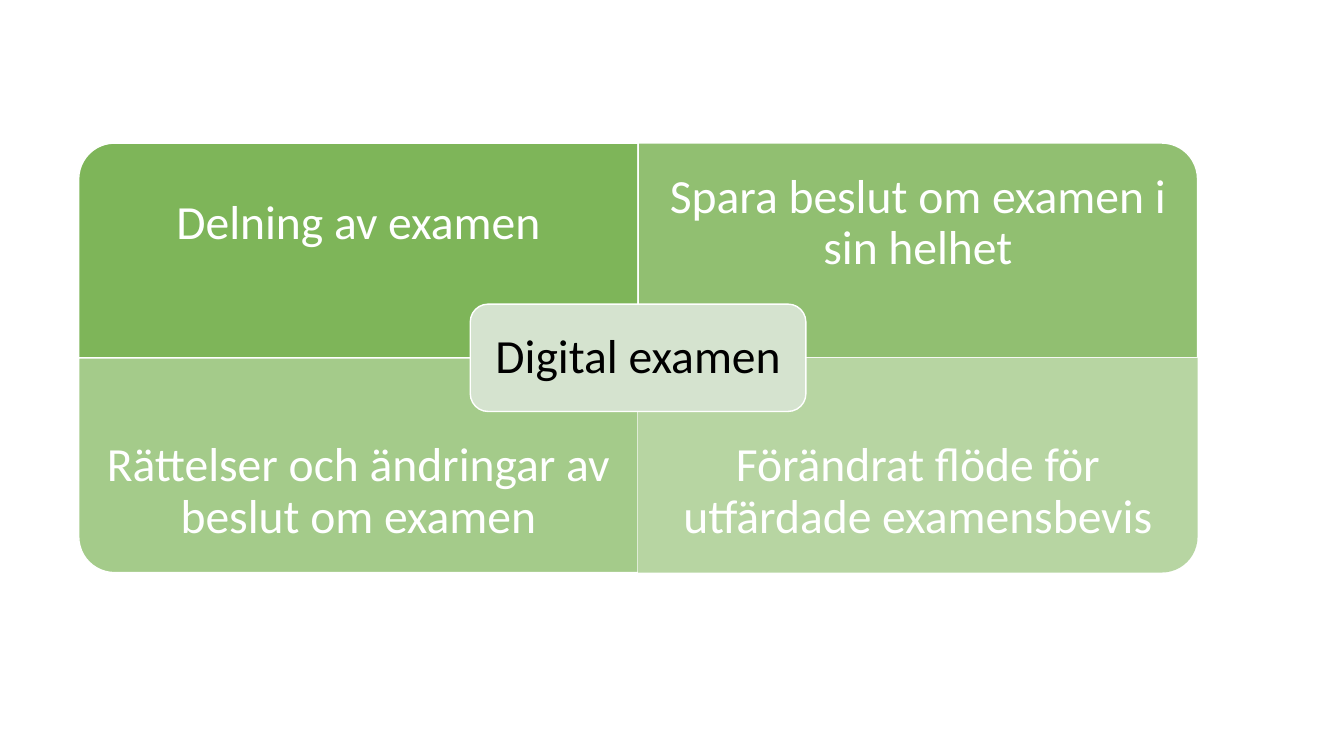
from lxml.etree import SubElement
from pptx import Presentation
from pptx.dml.color import RGBColor
from pptx.enum.shapes import MSO_SHAPE
from pptx.enum.text import MSO_ANCHOR, PP_ALIGN
from pptx.oxml.ns import qn
from pptx.util import Pt

PARTS = [
    {"text": "Delning av examen", "turn": 270, "alpha": 90, "edge": True},
    {"text": "Spara beslut om examen i sin helhet", "turn": 0, "alpha": 77, "edge": True},
    {"text": "Rättelser och ändringar av beslut om examen", "turn": 180, "alpha": 63, "edge": True},
    {"text": "Förändrat flöde för utfärdade examensbevis", "turn": 90, "alpha": 50, "edge": False},
]
CORE = "Digital examen"

THEME = {
    "green": RGBColor.from_string("70AD47"),
    "pale": RGBColor.from_string("D5E3CF"),
    "white": RGBColor.from_string("FFFFFF"),
    "black": RGBColor.from_string("000000"),
    "font": "Calibri",
    "size": Pt(34),
    "line": Pt(1),
}
LEFT, TOP, WIDE, HIGH = 56.2, 102.2, 399.6, 153.4
TEXT_HIGH = HIGH * 0.75
CORE_WIDE, CORE_HIGH = WIDE * 0.6, HIGH * 0.5
CORE_PAD = 3.7


def apply(item, values):
    for name, value in values.items():
        setattr(item, name, value)


def add_panel(group, kind, box, color, edge=True, turn=0, alpha=100):
    x, y, w, h = box
    if turn % 180:
        x, y, w, h = x + (w - h) / 2, y + (h - w) / 2, h, w
    panel = group.shapes.add_shape(kind, Pt(x), Pt(y), Pt(w), Pt(h))
    panel.rotation = turn
    panel.shadow.inherit = False
    panel.fill.solid()
    panel.fill.fore_color.rgb = color
    if alpha < 100:
        tone = panel.fill._xPr.find(qn("a:solidFill"))[0]
        SubElement(tone, qn("a:alpha"), val=str(alpha * 1000))
    if edge:
        panel.line.color.rgb = THEME["white"]
        panel.line.width = THEME["line"]
    else:
        panel.line.fill.background()


def add_label(group, text, box, inset, color):
    label = group.shapes.add_textbox(*map(Pt, box))
    frame = label.text_frame
    sides = ("left", "right", "top", "bottom")
    apply(frame, {f"margin_{side}": Pt(inset) for side in sides})
    apply(frame, {"word_wrap": True, "vertical_anchor": MSO_ANCHOR.MIDDLE})
    para = frame.paragraphs[0]
    apply(para, {"text": text, "alignment": PP_ALIGN.CENTER, "line_spacing": 0.9})
    font = para.runs[0].font
    apply(font, {"name": THEME["font"], "size": THEME["size"]})
    font.color.rgb = color


def main():
    deck = Presentation()
    apply(deck, {"slide_width": Pt(960), "slide_height": Pt(540)})
    slide = deck.slides.add_slide(deck.slide_layouts[6])
    group = slide.shapes.add_group_shape()

    for index, part in enumerate(PARTS):
        row, col = divmod(index, 2)
        x, y = LEFT + col * WIDE, TOP + row * HIGH
        add_panel(group, MSO_SHAPE.ROUND_1_RECTANGLE, (x, y, WIDE, HIGH),
                  THEME["green"], part["edge"], part["turn"], part["alpha"])
        drop = row * (HIGH - TEXT_HIGH)
        add_label(group, part["text"], (x, y + drop, WIDE, TEXT_HIGH), 18.6, THEME["white"])

    x, y = LEFT + WIDE - CORE_WIDE / 2, TOP + HIGH - CORE_HIGH / 2
    add_panel(group, MSO_SHAPE.ROUNDED_RECTANGLE, (x, y, CORE_WIDE, CORE_HIGH), THEME["pale"])
    inner = (x + CORE_PAD, y + CORE_PAD, CORE_WIDE - 2 * CORE_PAD, CORE_HIGH - 2 * CORE_PAD)
    add_label(group, CORE, inner, 10.2, THEME["black"])
    deck.save("out.pptx")


if __name__ == "__main__":
    main()
